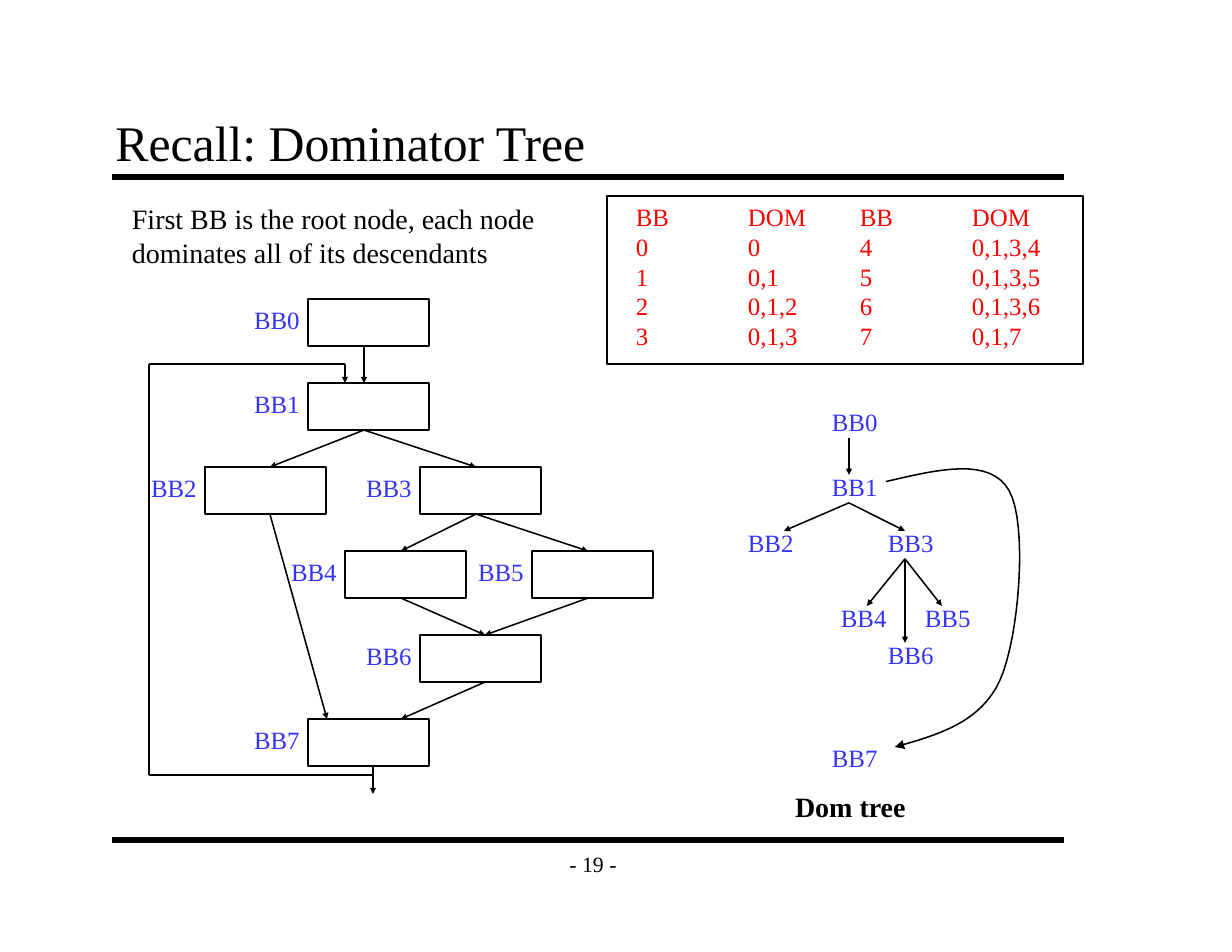
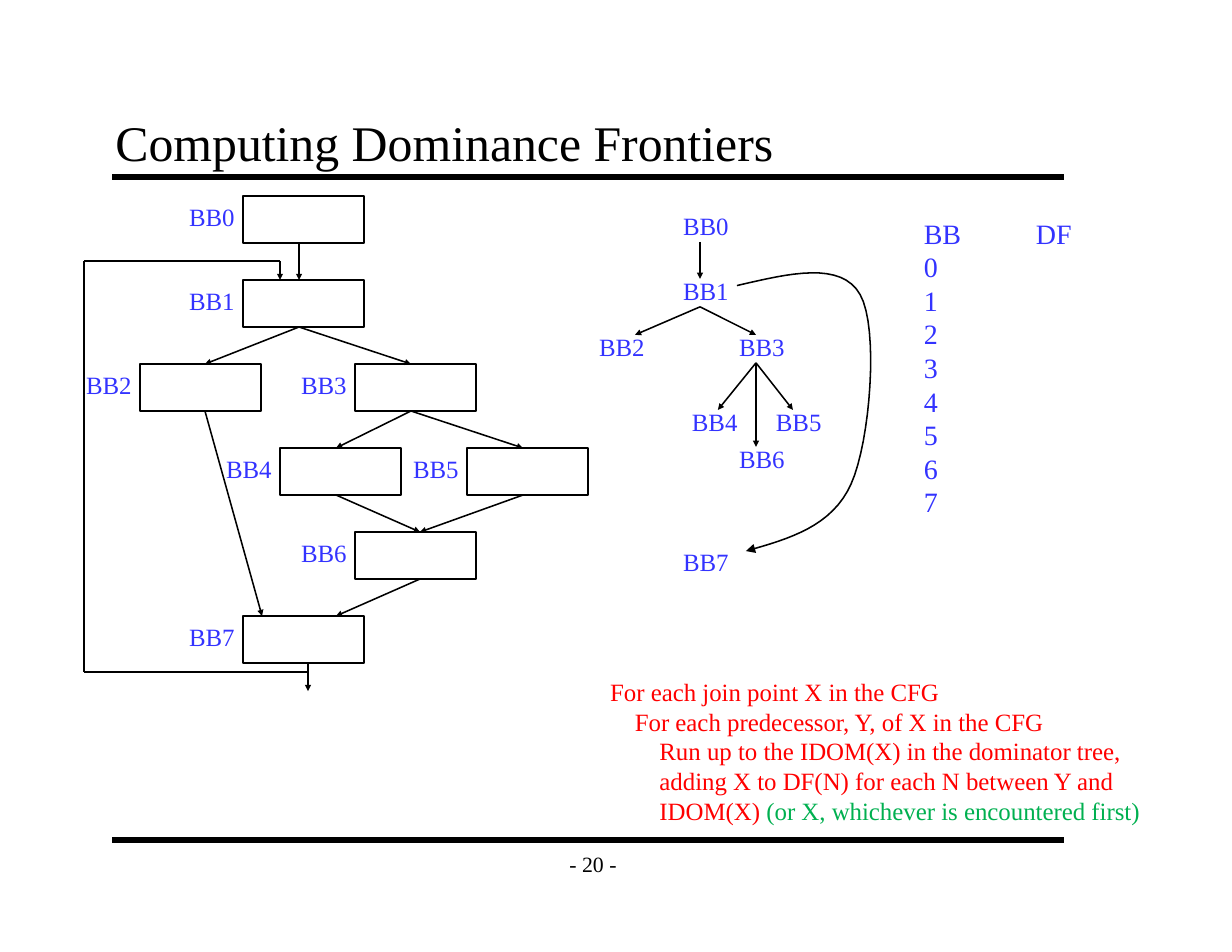
from dataclasses import dataclass
from itertools import pairwise

from lxml.etree import SubElement
from pptx import Presentation
from pptx.dml.color import RGBColor
from pptx.enum.shapes import MSO_CONNECTOR, MSO_SHAPE
from pptx.enum.text import MSO_ANCHOR, MSO_AUTO_SIZE, PP_ALIGN
from pptx.oxml.ns import qn
from pptx.util import Inches, Pt


@dataclass(frozen=True)
class Theme:
    font: str = "Times New Roman"
    ink: RGBColor = RGBColor(0x00, 0x00, 0x00)
    label: RGBColor = RGBColor(0x33, 0x33, 0xFF)
    accent: RGBColor = RGBColor(0xFF, 0x00, 0x00)
    remark: RGBColor = RGBColor(0x00, 0xB0, 0x50)
    title_size: int = 32
    body_size: int = 18
    small_size: int = 16
    footer_size: int = 14
    band_width: int = 4
    line_width: int = 1


THEME = Theme()
TITLE_ONLY = 5

BLOCK_WIDTH, BLOCK_HEIGHT, ROW_PITCH = 1.08, 0.42, 0.75
FLOW_BLOCKS = {
    "BB0": (0, 0, 0.5),
    "BB1": (0, 1, 0.5),
    "BB2": (-0.92, 2, 0.58),
    "BB3": (1, 2, 0.5),
    "BB4": (0.33, 3, 0.5),
    "BB5": (2, 3, 0.5),
    "BB6": (1, 4, 0.58),
    "BB7": (0, 5, 0.5),
}
FLOW_EDGES = [
    ("BB0", "BB1"), ("BB1", "BB2"), ("BB1", "BB3"), ("BB3", "BB4"),
    ("BB3", "BB5"), ("BB4", "BB6"), ("BB5", "BB6"), ("BB6", "BB7"), ("BB2", "BB7"),
]
SIDE_PORTS = {("BB6", "BB7"): 0.83, ("BB2", "BB7"): 0.17}
LOOP_PATH = [(0.58, 4.25), (-1.42, 4.25), (-1.42, 0.58), (0.33, 0.58), (0.33, 0.75)]

TREE_LABELS = {
    "BB0": (0, 0),
    "BB1": (0, 0.58),
    "BB2": (-0.75, 1.08),
    "BB3": (0.5, 1.08),
    "BB4": (0.08, 1.75),
    "BB5": (0.83, 1.75),
    "BB6": (0.5, 2.08),
    "BB7": (0, 3),
}
TREE_EDGES = [
    ("BB0", "BB1", 0.25), ("BB1", "BB2", 0.42), ("BB1", "BB3", 0.25),
    ("BB3", "BB4", 0.33), ("BB3", "BB6", 0.25), ("BB3", "BB5", 0.25),
]
TREE_CURVE = [
    (0.58, 0.72), (1.05, 0.61), (1.51, 0.5), (1.68, 0.8), (1.85, 1.1),
    (1.77, 2.11), (1.6, 2.49), (1.43, 2.87), (1.05, 2.98), (0.66, 3.09),
]
CURVE_STEPS = 16


def format_runs(paragraph, size, color, bold=False):
    for run in paragraph.runs:
        run.font.name = THEME.font
        run.font.size = Pt(size)
        run.font.color.rgb = color
        run.font.bold = bold


def set_padding(text_frame):
    text_frame.margin_left = text_frame.margin_right = Inches(0.11)
    text_frame.margin_top = text_frame.margin_bottom = Inches(0.06)


def style_line(shape, width=THEME.line_width, arrow_size=None):
    shape.line.color.rgb = THEME.ink
    shape.line.width = Pt(width)
    if arrow_size:
        line = shape.element.spPr.find(qn("a:ln"))
        SubElement(line, qn("a:tailEnd"), type="triangle", w=arrow_size, len=arrow_size)


def add_line(slide, start, end, width=THEME.line_width, arrow_size=None):
    points = [Inches(value) for value in (*start, *end)]
    connector = slide.shapes.add_connector(MSO_CONNECTOR.STRAIGHT, *points)
    style_line(connector, width, arrow_size)
    SubElement(connector.element.spPr, qn("a:effectLst"))


def add_arrow(slide, start, end):
    add_line(slide, start, end, arrow_size="sm")


def add_box(slide, left, top, width, height):
    box = slide.shapes.add_shape(
        MSO_SHAPE.RECTANGLE, Inches(left), Inches(top), Inches(width), Inches(height)
    )
    box.shadow.inherit = False
    box.fill.background()
    style_line(box)


def add_text(slide, position, extent, text, size, color, bold=False):
    box = slide.shapes.add_textbox(*[Inches(value) for value in (*position, *extent)])
    text_frame = box.text_frame
    text_frame.word_wrap = False
    text_frame.auto_size = MSO_AUTO_SIZE.SHAPE_TO_FIT_TEXT
    text_frame.text = text
    for paragraph in text_frame.paragraphs:
        format_runs(paragraph, size, color, bold)
    return text_frame


def add_columns(slide, position, extent, rows, size, color):
    text_frame = add_text(slide, position, extent, "\n".join(rows), size, color)
    for paragraph in text_frame.paragraphs:
        properties = paragraph._p.get_or_add_pPr()
        tab_list = SubElement(properties, qn("a:tabLst"))
        SubElement(tab_list, qn("a:tab"), pos=str(Inches(1)), algn="l")


def add_label(slide, left, top, name):
    add_text(slide, (left, top), (0.61, 0.37), name, THEME.small_size, THEME.label)


def add_curve(slide, controls):
    points = [controls[0]]
    for index in range(0, len(controls) - 1, 3):
        segment = controls[index:index + 4]
        for step in range(1, CURVE_STEPS + 1):
            t = step / CURVE_STEPS
            weights = ((1 - t) ** 3, 3 * t * (1 - t) ** 2, 3 * t**2 * (1 - t), t**3)
            points.append(
                tuple(sum(w * p[axis] for w, p in zip(weights, segment)) for axis in (0, 1))
            )
    vertices = [(Inches(x), Inches(y)) for x, y in points]
    builder = slide.shapes.build_freeform(*vertices[0])
    builder.add_line_segments(vertices[1:], close=False)
    curve = builder.convert_to_shape()
    curve.shadow.inherit = False
    curve.fill.background()
    style_line(curve, arrow_size="med")


def add_flow_graph(slide, left, top):
    def port(name, height=0, offset=None):
        column, row, default = FLOW_BLOCKS[name]
        x = default if offset is None else offset
        return left + column + x, top + row * ROW_PITCH + height

    for name, (column, row, _) in FLOW_BLOCKS.items():
        x, y = left + column, top + row * ROW_PITCH
        add_box(slide, x, y, BLOCK_WIDTH, BLOCK_HEIGHT)
        add_label(slide, x - 0.58, y, name)
    for source, target in FLOW_EDGES:
        entry = port(target, offset=SIDE_PORTS.get((source, target)))
        add_arrow(slide, port(source, BLOCK_HEIGHT), entry)

    add_arrow(slide, port("BB7", BLOCK_HEIGHT, 0.58), port("BB7", 0.67, 0.58))
    corners = [(left + x, top + y) for x, y in LOOP_PATH]
    *sides, entry = pairwise(corners)
    for start, end in sides:
        add_line(slide, start, end)
    add_arrow(slide, *entry)


def add_dominator_tree(slide, left, top):
    for name, (x, y) in TREE_LABELS.items():
        add_label(slide, left + x, top + y, name)
    for parent, child, entry in TREE_EDGES:
        parent_x, parent_y = TREE_LABELS[parent]
        child_x, child_y = TREE_LABELS[child]
        add_arrow(
            slide,
            (left + parent_x + 0.25, top + parent_y + 0.33),
            (left + child_x + entry, top + child_y + 0.08),
        )
    add_curve(slide, [(left + x, top + y) for x, y in TREE_CURVE])


def add_slide(presentation, title, number):
    slide = presentation.slides.add_slide(presentation.slide_layouts[TITLE_ONLY])
    heading = slide.shapes.title
    heading.left, heading.top = Inches(0.92), Inches(0.92)
    heading.width, heading.height = Inches(8.5), Inches(0.67)
    text_frame = heading.text_frame
    text_frame.text = title
    text_frame.vertical_anchor = MSO_ANCHOR.BOTTOM
    text_frame.auto_size = MSO_AUTO_SIZE.NONE
    set_padding(text_frame)
    text_frame.paragraphs[0].alignment = PP_ALIGN.LEFT
    format_runs(text_frame.paragraphs[0], THEME.title_size, THEME.ink)

    for y in (1.58, 7.5):
        add_line(slide, (1, y), (9.5, y), THEME.band_width)
    footer = add_text(
        slide, (4.92, 7.5), (0.75, 0.42), f"- {number} -", THEME.footer_size, THEME.ink
    )
    footer.auto_size = MSO_AUTO_SIZE.NONE
    footer.vertical_anchor = MSO_ANCHOR.MIDDLE
    set_padding(footer)
    footer.paragraphs[0].alignment = PP_ALIGN.CENTER
    return slide


def add_pseudocode(slide):
    steps = [
        (0, "For each join point X in the CFG"),
        (1, "For each predecessor, Y, of X in the CFG"),
        (2, "Run up to the IDOM(X) in the dominator tree,"),
        (2, "adding X to DF(N) for each N between Y and"),
        (2, "IDOM(X) "),
    ]
    text = "\n".join(step for _, step in steps)
    text_frame = add_text(
        slide, (5.35, 5.99), (5, 1.45), text, THEME.small_size, THEME.accent
    )
    for paragraph, (depth, _) in zip(text_frame.paragraphs, steps):
        paragraph._p.get_or_add_pPr().set("marL", str(Inches(0.22 * depth)))
    last = text_frame.paragraphs[-1]
    remark = last.add_run()
    remark.text = "(or X, whichever is encountered first)"
    format_runs(last, THEME.small_size, THEME.accent)
    remark.font.color.rgb = THEME.remark


def build_dominator_tree_slide(presentation):
    slide = add_slide(presentation, "Recall: Dominator Tree", 19)
    add_flow_graph(slide, 2.75, 2.67)
    add_dominator_tree(slide, 7.33, 3.58)
    dominators = ["0", "0,1", "0,1,2", "0,1,3", "0,1,3,4", "0,1,3,5", "0,1,3,6", "0,1,7"]
    rows = [f"{block}\t{members}" for block, members in enumerate(dominators)]
    for left, width, part in ((5.58, 1.72, rows[:4]), (7.58, 1.81, rows[4:])):
        add_columns(
            slide, (left, 1.75), (width, 1.44), ["BB\tDOM", *part],
            THEME.small_size, THEME.accent,
        )
    add_text(slide, (7, 7), (1.19, 0.4), "Dom tree", THEME.body_size, THEME.ink, bold=True)
    add_text(
        slide, (1.08, 1.75), (3.8, 0.7),
        "First BB is the root node, each node\ndominates all of its descendants",
        THEME.body_size, THEME.ink,
    )
    add_box(slide, 5.42, 1.75, 4.25, 1.5)


def build_frontiers_slide(presentation):
    slide = add_slide(presentation, "Computing Dominance Frontiers", 20)
    add_flow_graph(slide, 2.17, 1.75)
    add_dominator_tree(slide, 6, 1.83)
    add_pseudocode(slide)
    rows = ["BB\tDF", *[str(block) for block in range(8)]]
    add_columns(slide, (8.15, 1.88), (1.52, 2.8), rows, THEME.body_size, THEME.label)


def main():
    presentation = Presentation()
    presentation.slide_width = Inches(11)
    presentation.slide_height = Inches(8.5)
    build_dominator_tree_slide(presentation)
    build_frontiers_slide(presentation)
    presentation.save("out.pptx")


if __name__ == "__main__":
    main()
